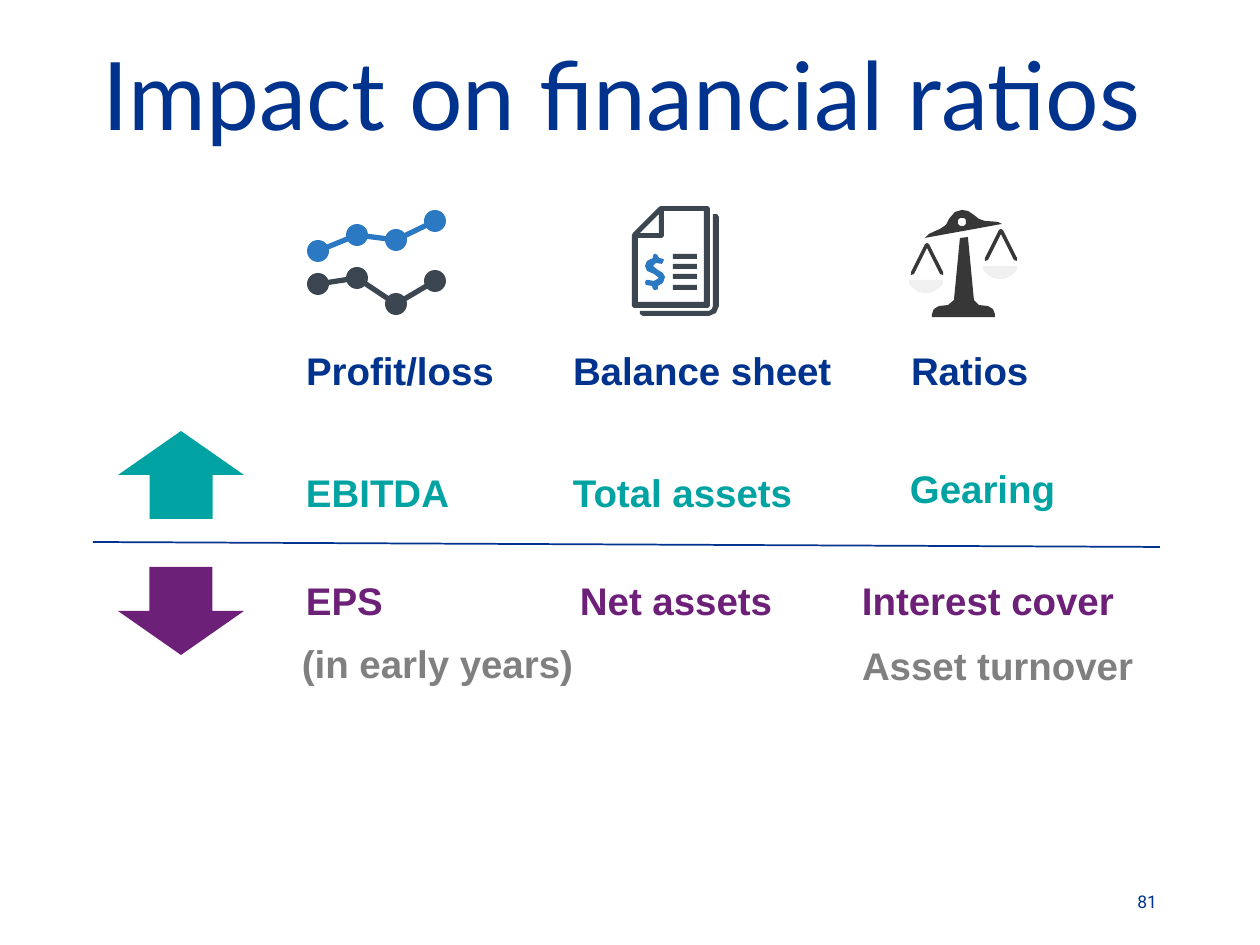
from itertools import pairwise
from math import cos, pi, sin

from lxml.etree import SubElement
from pptx import Presentation
from pptx.dml.color import RGBColor
from pptx.enum.shapes import MSO_CONNECTOR, MSO_SHAPE
from pptx.enum.text import MSO_ANCHOR, MSO_AUTO_SIZE, PP_ALIGN
from pptx.oxml.ns import qn
from pptx.util import Pt

PX = 914400 / 126
NAVY = RGBColor(0x00, 0x33, 0x8D)
TEAL = RGBColor(0x00, 0xA3, 0xA1)
PURPLE = RGBColor(0x6D, 0x20, 0x77)
GREY = RGBColor(0x80, 0x80, 0x80)
BLUE = RGBColor(0x2B, 0x79, 0xC2)
SLATE = RGBColor(0x3C, 0x46, 0x51)
CHARCOAL = RGBColor(0x37, 0x37, 0x37)
PALE = RGBColor(0xF0, 0xF0, 0xF0)

TITLE = "Impact on financial ratios"
PAGE_NUMBER = "81"
LABEL_HEIGHT = 57

# colour, then (text, left, top, width) for each label
LABEL_ROWS = [
    (NAVY, [("Profit/loss", 306, 347, 236), ("Balance sheet", 573, 347, 261),
            ("Ratios", 911, 347, 236)]),
    (TEAL, [("EBITDA", 306, 469, 224), ("Total assets", 573, 469, 224),
            ("Gearing", 910, 465, 224)]),
    (PURPLE, [("EPS", 306, 577, 224), ("Net assets", 580, 577, 224),
              ("Interest cover", 862, 577, 263)]),
    (GREY, [("(in early years)", 302, 640, 277), ("Asset turnover", 862, 642, 282)]),
]
# colour, top, rotation
ARROWS = [(TEAL, 431, 180), (PURPLE, 567, 0)]

TREND_X = [318, 357, 396, 435]
TRENDS = [(BLUE, [251, 235, 240, 221]), (SLATE, [284, 278, 304, 281])]
DOT_RADIUS = 11

BACK_SHEET = [(713, 214), (717, 214), (719, 217), (719, 306), (716, 313), (709, 316),
              (643, 316), (640, 314), (640, 311), (709, 311), (712, 309), (713, 306)]
PAGE_EDGE = [(661, 206), (708, 206), (710, 208), (710, 306), (708, 308), (634, 308),
             (632, 306), (632, 235), (633, 233), (659, 207)]
PAGE_INSIDE = [(664, 211), (704, 211), (704, 302), (638, 302), (638, 238), (662, 238),
               (664, 236)]
PAGE_FOLD = [(659, 214), (659, 233), (640, 233)]
TEXT_LINES = [[(673, y), (697, y), (697, y + 5), (673, y + 5)]
              for y in (254, 264, 274, 285)]
DOLLAR = [(658, 289), (658, 286), (663, 283), (665, 277), (663, 273), (658, 270),
          (653, 266), (656, 263), (662, 264), (664, 260), (663, 259), (659, 258),
          (658, 256), (656, 254), (654, 254), (653, 256), (653, 258), (647, 261),
          (645, 266), (647, 271), (654, 274), (659, 278), (654, 281), (648, 280),
          (646, 280), (645, 283), (646, 285), (652, 286), (653, 289), (654, 290),
          (656, 290)]

PAN_STRINGS = [(943, 275), (943, 272), (929, 244), (927, 243), (925, 244), (911, 272),
               (911, 275), (914, 274), (927, 248), (940, 274)]
RIGHT_PAN_SHIFT = (74, -14)
POST = [(988, 306), (979, 305), (974, 300), (968, 237), (960, 238), (954, 300),
        (948, 305), (939, 306), (934, 309), (932, 314), (932, 317), (995, 317),
        (995, 314), (993, 309)]
BEAM = [(1002, 224), (998, 222), (985, 221), (979, 219), (974, 215), (968, 211),
        (962, 210), (955, 212), (949, 219), (946, 225), (940, 229), (929, 234),
        (925, 238)]


def px(length):
    return round(length * PX)


def box(*lengths):
    return [px(length) for length in lengths]


def arc(cx, cy, rx, ry, sweep, steps=16):
    """Points on an ellipse, clockwise from its right end."""
    angles = [sweep * step / steps for step in range(steps + 1)]
    return [(round(cx + rx * cos(a), 2), round(cy + ry * sin(a), 2)) for a in angles]


def moved(points, shift):
    return [(x + shift[0], y + shift[1]) for x, y in points]


def paint(shape, color):
    shape.fill.solid()
    shape.fill.fore_color.rgb = color
    shape.line.fill.background()
    shape.shadow.inherit = False


def add_outline(shapes, color, *contours):
    """Draw one filled freeform; a contour inside another is a hole."""
    first, *others = contours
    builder = shapes.build_freeform(*first[0], scale=PX)
    builder.add_line_segments(first[1:])
    for contour in others:
        builder.move_to(*contour[0])
        builder.add_line_segments(contour[1:])
    paint(builder.convert_to_shape(), color)


def add_line(shapes, start, end, color, width):
    line = shapes.add_connector(MSO_CONNECTOR.STRAIGHT, *box(*start, *end))
    line.line.color.rgb = color
    line.line.width = Pt(width)
    SubElement(line._element.spPr, qn("a:effectLst"))


def write(shape, text, font_name, size, color, bold=False, anchor=MSO_ANCHOR.TOP):
    frame = shape.text_frame
    frame.word_wrap = True
    frame.auto_size = MSO_AUTO_SIZE.NONE
    frame.vertical_anchor = anchor
    frame.margin_left = frame.margin_right = frame.margin_top = frame.margin_bottom = 0
    paragraph = frame.paragraphs[0]
    paragraph.text = text
    paragraph.alignment = PP_ALIGN.LEFT
    font = paragraph.font
    font.name, font.size, font.bold = font_name, Pt(size), bold
    font.color.rgb = color
    return paragraph


def add_trend_icon(shapes):
    for color, heights in TRENDS:
        points = list(zip(TREND_X, heights))
        for start, end in pairwise(points):
            add_line(shapes, start, end, color, 3)
        for x, y in points:
            dot = shapes.add_shape(MSO_SHAPE.OVAL, *box(
                x - DOT_RADIUS, y - DOT_RADIUS, 2 * DOT_RADIUS, 2 * DOT_RADIUS))
            paint(dot, color)


def add_scales_icon(shapes):
    pan = arc(926, 280, 17, 13, pi)
    add_outline(shapes, PALE, pan, moved(pan, RIGHT_PAN_SHIFT))
    for strings in (PAN_STRINGS, moved(PAN_STRINGS, RIGHT_PAN_SHIFT)):
        add_outline(shapes, CHARCOAL, strings)
    add_outline(shapes, CHARCOAL, POST)
    add_outline(shapes, CHARCOAL, BEAM, arc(962, 222, 4, 4, 2 * pi))


def main():
    deck = Presentation()
    deck.slide_width, deck.slide_height = box(1260, 945)
    slide = deck.slides.add_slide(deck.slide_layouts[5])
    shapes = slide.shapes

    title = shapes.title
    title.left, title.top, title.width, title.height = box(103, 67, 1052, 72)
    write(title, TITLE, "Lato", 54, NAVY).line_spacing = 0.7

    for color, top, rotation in ARROWS:
        arrow = shapes.add_shape(MSO_SHAPE.DOWN_ARROW, *box(118, top, 126, 88))
        arrow.rotation = rotation
        paint(arrow, color)

    for color, labels in LABEL_ROWS:
        for text, left, top, width in labels:
            label = shapes.add_textbox(*box(left, top, width, LABEL_HEIGHT))
            write(label, text, "Arial", 22, color, bold=True)

    add_line(shapes, (93, 542), (1160, 547), NAVY, 1)

    add_trend_icon(shapes)
    add_outline(shapes, SLATE, BACK_SHEET, PAGE_EDGE, PAGE_INSIDE, PAGE_FOLD, *TEXT_LINES)
    add_outline(shapes, BLUE, DOLLAR)
    add_scales_icon(shapes)

    number = shapes.add_textbox(*box(992, 892, 165, 20))
    write(number, PAGE_NUMBER, "Roboto", 10, NAVY,
          anchor=MSO_ANCHOR.BOTTOM).alignment = PP_ALIGN.RIGHT

    deck.save("out.pptx")


if __name__ == "__main__":
    main()
